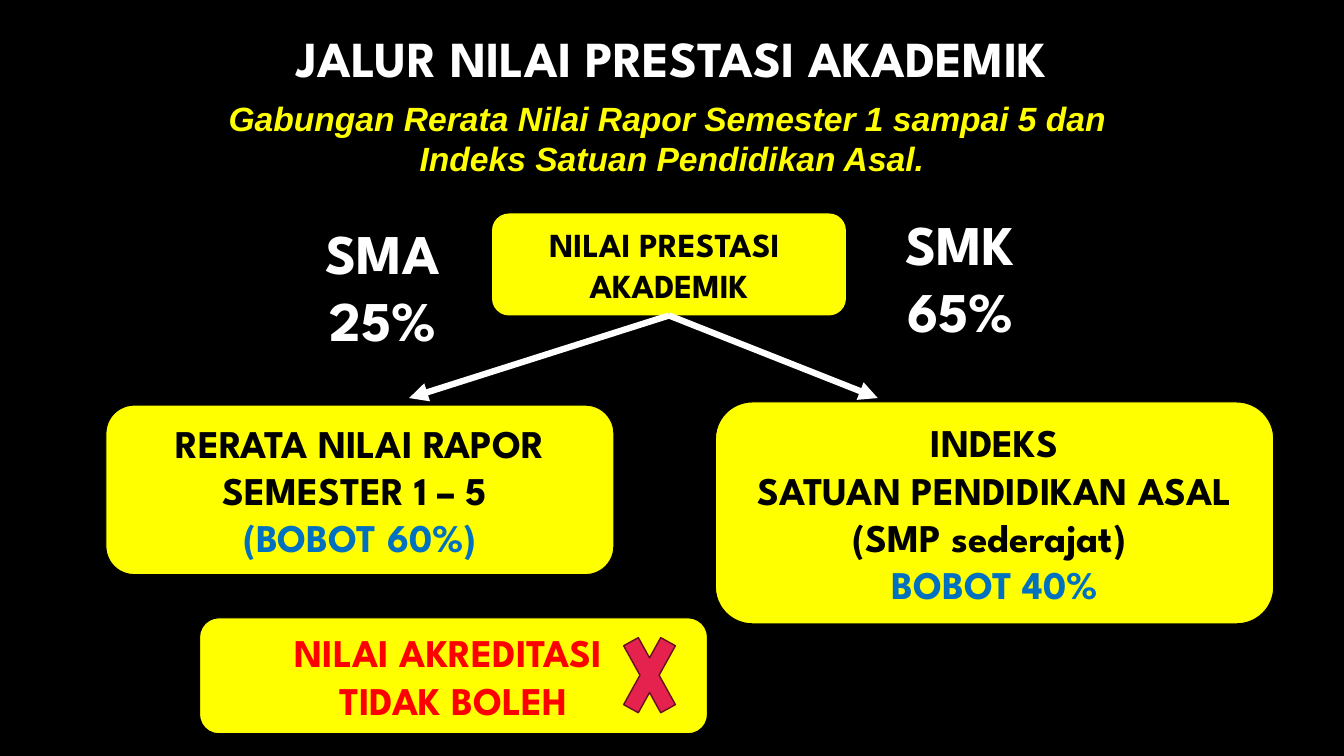
from lxml.etree import SubElement
from pptx import Presentation
from pptx.dml.color import RGBColor
from pptx.enum.shapes import MSO_CONNECTOR, MSO_SHAPE
from pptx.enum.text import MSO_ANCHOR, MSO_AUTO_SIZE, PP_ALIGN
from pptx.oxml.ns import qn
from pptx.util import Cm, Pt

COLORS = {
    "black": "000000", "white": "FFFFFF", "yellow": "FFFF00", "blue": "0070C0",
    "red": "FF0000", "cross": "E5224E", "cross_edge": "640F22",
}


def rgb(name):
    return RGBColor.from_string(COLORS[name])


def write(shape, lines, size, color="black", font="League Spartan", italic=False,
          anchor=MSO_ANCHOR.MIDDLE, last_color=None):
    frame = shape.text_frame
    frame.word_wrap = True
    frame.auto_size = MSO_AUTO_SIZE.NONE
    frame.vertical_anchor = anchor
    for index, line in enumerate(lines):
        para = frame.paragraphs[0] if index == 0 else frame.add_paragraph()
        para.alignment = PP_ALIGN.CENTER
        span = para.add_run()
        span.text = line
        span.font.name = font
        span.font.size = Pt(size)
        span.font.bold = True
        span.font.italic = italic
        is_last = index == len(lines) - 1
        span.font.color.rgb = rgb(last_color if last_color and is_last else color)


deck = Presentation()
deck.slide_width, deck.slide_height = Cm(33.87), Cm(19.05)
page = deck.slides.add_slide(deck.slide_layouts[5])
page.background.fill.solid()
page.background.fill.fore_color.rgb = rgb("black")

# Title
title = page.shapes.title
title.left, title.top, title.width, title.height = Cm(0), Cm(0.56), Cm(33.87), Cm(1.8)
write(title, ["JALUR NILAI PRESTASI AKADEMIK"], 36, color="white", anchor=MSO_ANCHOR.TOP)

# Subtitle
subtitle = page.shapes.add_textbox(Cm(0), Cm(2.34), Cm(33.87), Cm(2.31))
write(subtitle, ["Gabungan Rerata Nilai Rapor Semester 1 sampai 5 dan ",
                 "Indeks Satuan Pendidikan Asal."],
      24, color="yellow", font="Arial", italic=True, anchor=MSO_ANCHOR.TOP)

# School shares on both sides of the top box
for left, top, width, lines in [
    (7.29, 5.38, 4.7, ["SMA", "25%"]),
    (21.56, 5.16, 5.28, ["SMK", "65%"]),
]:
    share = page.shapes.add_textbox(Cm(left), Cm(top), Cm(width), Cm(3.68))
    write(share, lines, 40, color="white", anchor=MSO_ANCHOR.TOP)

# Yellow boxes: position, lines, text format
boxes = []
for left, top, width, height, lines, text_format in [
    (12.4, 5.38, 8.92, 2.57, ["NILAI PRESTASI ", "AKADEMIK"], {"size": 24}),
    (2.67, 10.21, 12.8, 4.27, ["RERATA NILAI RAPOR SEMESTER 1 – 5 ", "(BOBOT 60%)"],
     {"size": 28, "last_color": "blue"}),
    (18.03, 10.13, 14.07, 5.59,
     ["INDEKS", "SATUAN PENDIDIKAN ASAL", "(SMP sederajat) ", "BOBOT 40%"],
     {"size": 28, "last_color": "blue"}),
    (5.03, 15.57, 12.8, 2.92, ["NILAI AKREDITASI ", "TIDAK BOLEH"],
     {"size": 28, "color": "red"}),
]:
    box = page.shapes.add_shape(MSO_SHAPE.ROUNDED_RECTANGLE,
                                Cm(left), Cm(top), Cm(width), Cm(height))
    box.shadow.inherit = False
    box.fill.solid()
    box.fill.fore_color.rgb = rgb("yellow")
    if boxes:
        box.line.color.rgb = rgb("black")
        box.line.width = Pt(0.75)
    else:
        box.line.fill.background()
    write(box, lines, **text_format)
    boxes.append(box)

# Arrows from the top box to the two components
for end_left in (10.31, 22.12):
    arrow = page.shapes.add_connector(MSO_CONNECTOR.STRAIGHT, Cm(16.86), Cm(7.95),
                                      Cm(end_left), Cm(10.03))
    arrow.begin_connect(boxes[0], 2)
    arrow.line.color.rgb = rgb("white")
    arrow.line.width = Pt(4.5)
    SubElement(arrow.line._get_or_add_ln(), qn("a:tailEnd"), type="triangle")
    SubElement(arrow._element.spPr, qn("a:effectLst"))

# Cross on the accreditation box
cross = page.shapes.add_shape(MSO_SHAPE.MATH_MULTIPLY, Cm(15.47), Cm(15.39), Cm(1.8), Cm(3.25))
cross.shadow.inherit = False
cross.fill.solid()
cross.fill.fore_color.rgb = rgb("cross")
cross.line.color.rgb = rgb("cross_edge")
cross.line.width = Pt(1)

deck.save("out.pptx")
